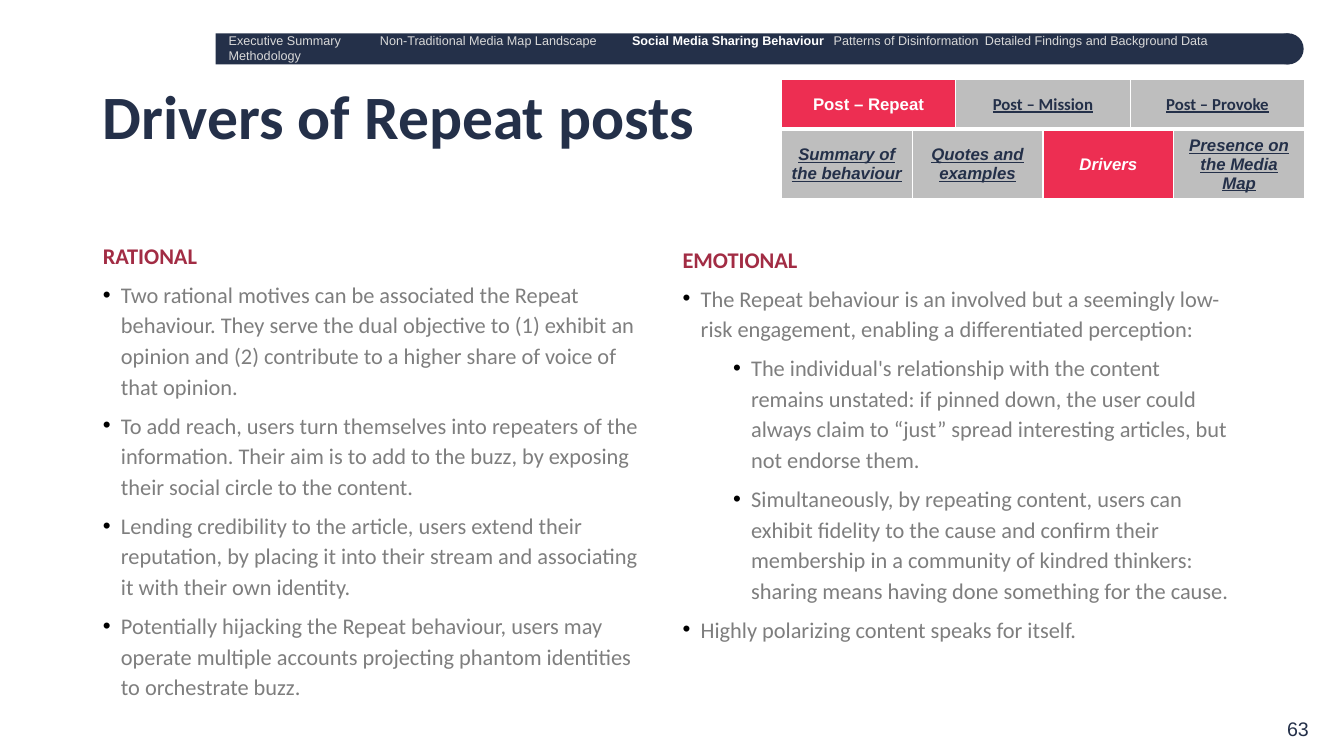
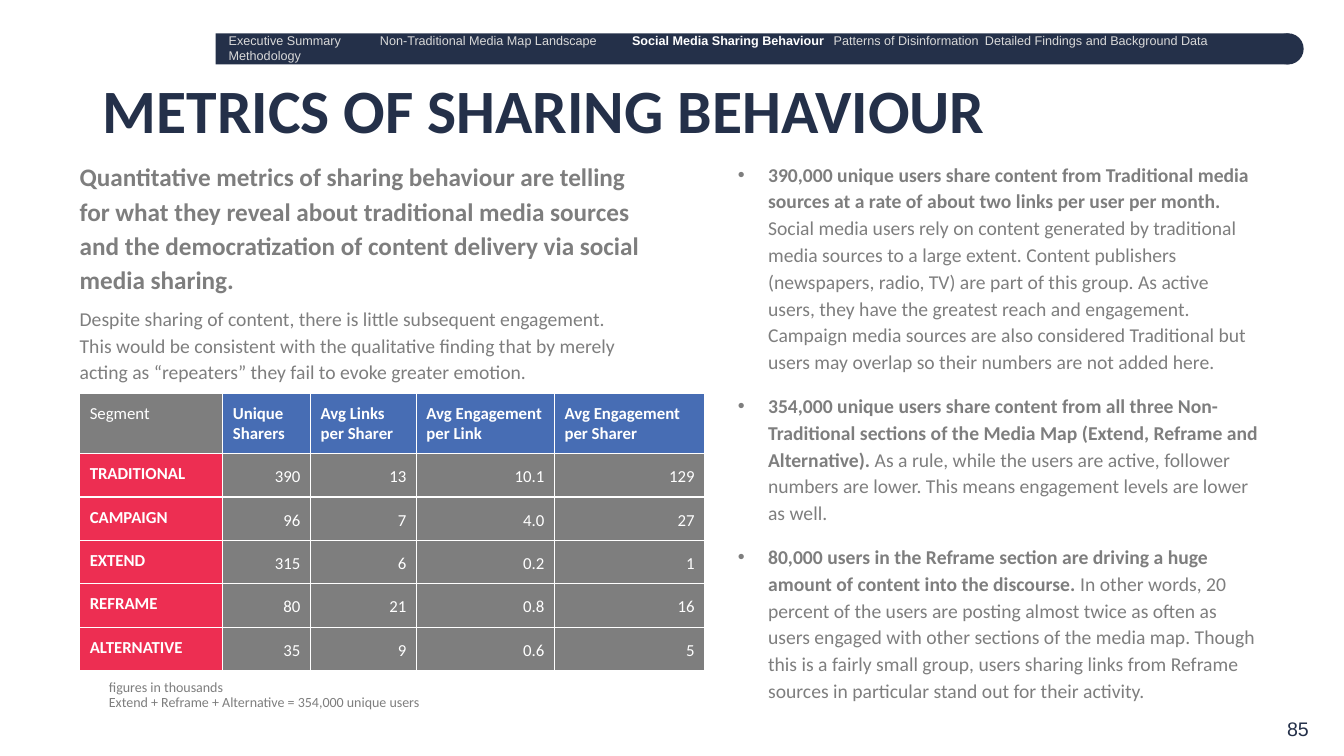
from pptx import Presentation
from pptx.dml.color import RGBColor
from pptx.enum.shapes import MSO_SHAPE
from pptx.enum.text import MSO_ANCHOR, MSO_AUTO_SIZE, PP_ALIGN
from pptx.oxml.ns import qn
from pptx.util import Pt
from lxml.etree import SubElement

PX = 9144  # EMU in one px, 100 px to the inch
NAVY = RGBColor(0x24, 0x30, 0x49)
RED = RGBColor(0xED, 0x2E, 0x52)
CRIMSON = RGBColor(0xA2, 0x2C, 0x44)
GREY = RGBColor(0x7E, 0x7E, 0x7E)
PALE = RGBColor(0xD9, 0xD9, 0xD9)
BLUE = RGBColor(0x47, 0x6D, 0xB4)
BLACK = RGBColor(0, 0, 0)
WHITE = RGBColor(0xFF, 0xFF, 0xFF)

NAV = ["Executive Summary", "Non-Traditional Media Map Landscape",
       "Social Media Sharing Behaviour", "Patterns of Disinformation",
       "Detailed Findings and Background Data", "Methodology"]
NAV_TABS = [128, 360, 568, 729, 967]
NAV_CURRENT = 2


def write(p, parts, size, color, font="Calibri", spacing=1.0, before=0, after=0,
          align=PP_ALIGN.LEFT, margin=0, hang=0, bullet=None):
    """Fill a paragraph with (text, bold) parts; bullet is the bullet colour."""
    p.alignment, p.line_spacing = align, spacing
    p.space_before, p.space_after = Pt(before), Pt(after)
    pPr = p._p.get_or_add_pPr()
    pPr.set("marL", str(margin * PX))
    pPr.set("indent", str(-hang * PX))
    if bullet is None:
        SubElement(pPr, qn("a:buNone"))
    else:
        SubElement(SubElement(pPr, qn("a:buClr")), qn("a:srgbClr"), val=str(bullet))
        SubElement(pPr, qn("a:buFont"), typeface="Arial")
        SubElement(pPr, qn("a:buChar"), char="•")
    for text, bold in parts:
        r = p.add_run()
        r.text = text
        r.font.name, r.font.size, r.font.bold = font, Pt(size), bold
        r.font.color.rgb = color


def style_cell(cell, fill, alpha=100, bottom=1, pad=10):
    """Give a cell white borders, a fill and its margins."""
    tcPr = cell._tc.get_or_add_tcPr()
    for side, width in (("L", 1), ("R", 1), ("T", 1), ("B", bottom)):
        ln = SubElement(tcPr, qn("a:ln" + side), w=str(Pt(width)))
        SubElement(SubElement(ln, qn("a:solidFill")), qn("a:srgbClr"), val=str(WHITE))
    cell.fill.solid()
    cell.fill.fore_color.rgb = fill
    if alpha < 100:
        clr = tcPr.find(qn("a:solidFill")).find(qn("a:srgbClr"))
        SubElement(clr, qn("a:alpha"), val=str(alpha * 1000))
    cell.margin_left = cell.margin_right = 10 * PX
    cell.margin_top = cell.margin_bottom = pad * PX


prs = Presentation()
prs.slide_width, prs.slide_height = 1333 * PX, 750 * PX

# Shared parts: band, navigation, page number, title, placeholder places
pages = [
    ("63", "Drivers of Repeat posts", 5,
     [(92, 40, 1150, 158), (92, 235, 567, 476), (667, 235, 567, 430)]),
    ("85", "METRICS OF SHARING BEHAVIOUR", 10,
     [(92, 40, 920, 145), (69, 146, 576, 572), (79, 665, 392, 53)]),
]
slides = []
for number, title, pad, boxes in pages:
    s = prs.slides.add_slide(prs.slide_layouts[3])
    slides.append(s)
    for shape, left, width in ((MSO_SHAPE.RECTANGLE, 214, 1064), (MSO_SHAPE.OVAL, 1262, 31)):
        sp = s.shapes.add_shape(shape, left * PX, 33 * PX, width * PX, 31 * PX)
        sp.shadow.inherit = False
        sp.fill.solid()
        sp.fill.fore_color.rgb = NAVY
        sp.line.fill.background()

    tf = s.shapes.add_textbox(217 * PX, 34 * PX, 1071 * PX, 27 * PX).text_frame
    tf.word_wrap, tf.vertical_anchor = True, MSO_ANCHOR.MIDDLE
    p = tf.paragraphs[0]
    last = len(NAV) - 1
    write(p, [(name + "\t" * (i < last), i == NAV_CURRENT) for i, name in enumerate(NAV)],
          9, PALE, "Arial")
    p.runs[NAV_CURRENT].font.color.rgb = WHITE
    tabs = SubElement(p._p.pPr, qn("a:tabLst"))
    for pos in NAV_TABS:
        SubElement(tabs, qn("a:tab"), pos=str(pos * PX), algn="l")

    tf = s.shapes.add_textbox(1190 * PX, 706 * PX, 118 * PX, 34 * PX).text_frame
    tf.word_wrap = True
    write(tf.paragraphs[0], [(number, False)], 14, NAVY, "Arial", align=PP_ALIGN.RIGHT)

    for ph, box in zip(s.placeholders, boxes):
        ph.left, ph.top, ph.width, ph.height = (v * PX for v in box)
        tf = ph.text_frame
        tf.auto_size = MSO_AUTO_SIZE.NONE
        tf.margin_left = tf.margin_right = 10 * PX
        tf.margin_top = tf.margin_bottom = pad * PX
    tf = s.shapes.title.text_frame
    tf.vertical_anchor = MSO_ANCHOR.MIDDLE
    write(tf.paragraphs[0], [(title, True)], 44, NAVY, spacing=0.9)

drivers, metrics = slides

# Drivers: two lists, each item with its level
columns = [
    ("RATIONAL", 1.0, [
        (0, "Two rational motives can be associated the Repeat behaviour. They serve the dual "
            "objective to (1) exhibit an opinion and (2) contribute to a higher share of voice "
            "of that opinion."),
        (0, "To add reach, users turn themselves into repeaters of the information. Their aim "
            "is to add to the buzz, by exposing their social circle to the content."),
        (0, "Lending credibility to the article, users extend their reputation, by placing it "
            "into their stream and associating it with their own identity."),
        (0, "Potentially hijacking the Repeat behaviour, users may operate multiple accounts "
            "projecting phantom identities to orchestrate buzz."),
    ]),
    ("EMOTIONAL", 1.14, [
        (0, "The Repeat behaviour is an involved but a seemingly low-risk engagement, enabling "
            "a differentiated perception:"),
        (1, "The individual's relationship with the content remains unstated: if pinned down, "
            "the user could always claim to “just” spread interesting articles, but not "
            "endorse them."),
        (1, "Simultaneously, by repeating content, users can exhibit fidelity to the cause and "
            "confirm their membership in a community of kindred thinkers: sharing means having "
            "done something for the cause."),
        (0, "Highly polarizing content speaks for itself."),
    ]),
]
for idx, (heading, spacing, items) in enumerate(columns, 1):
    tf = drivers.placeholders[idx].text_frame
    write(tf.paragraphs[0], [(heading, True)], 16, CRIMSON, spacing=spacing)
    for level, text in items:
        p = tf.add_paragraph()
        p.level = level
        write(p, [(text, False)], 16, GREY, spacing=1.14, before=6,
              margin=18 + 50 * level, hang=18, bullet=BLACK)

# Drivers: two rows of tabs, the current one in red
tab_rows = [
    (128, 55, "Drivers", True, "Arial",
     ["Summary of the behaviour", "Quotes and examples", "Drivers", "Presence on the Media Map"]),
    (79, 49, "Post – Repeat", False, "Calibri",
     ["Post – Repeat", "Post – Mission", "Post – Provoke"]),
]
for top, height, current, italic, font, labels in tab_rows:
    tbl = drivers.shapes.add_table(1, len(labels), 775 * PX, top * PX,
                                   519 * PX, height * PX).table
    tbl.first_row = tbl.horz_banding = False
    for cell, label in zip(tbl.rows[0].cells, labels):
        active = label == current
        style_cell(cell, RED if active else GREY, 100 if active else 50, bottom=3, pad=5)
        cell.vertical_anchor = MSO_ANCHOR.MIDDLE
        p = cell.text_frame.paragraphs[0]
        write(p, [(label, True)], 12, WHITE if active else NAVY,
              "Arial" if active else font, align=PP_ALIGN.CENTER)
        p.runs[0].font.italic, p.runs[0].font.underline = italic, not active

# Metrics: introduction and footnotes
tf = metrics.placeholders[1].text_frame
write(tf.paragraphs[0], [(
    "Quantitative metrics of sharing behaviour are telling for what they reveal about "
    "traditional media sources and the democratization of content delivery via social media "
    "sharing.", True)], 18, GREY, spacing=1.14)
write(tf.add_paragraph(), [(
    "Despite sharing of content, there is little subsequent engagement. This would be "
    "consistent with the qualitative finding that by merely acting as “repeaters” they fail "
    "to evoke greater emotion.", False)], 14, GREY, spacing=1.14, before=6)

tf = metrics.placeholders[2].text_frame
write(tf.paragraphs[0], [("figures in thousands", False)], 10, GREY, spacing=0.9, margin=19)
write(tf.add_paragraph(), [("Extend + Reframe + Alternative = 354,000 unique users", False)],
      10, GREY, spacing=0.9, margin=19)

# Metrics: table of segments
rows = [
    ["Segment", "Unique Sharers", "Avg Links per Sharer", "Avg Engagement per Link",
     "Avg Engagement per Sharer"],
    ["TRADITIONAL", "390", "13", "10.1", "129"],
    ["CAMPAIGN", "96", "7", "4.0", "27"],
    ["EXTEND", "315", "6", "0.2", "1"],
    ["REFRAME", "80", "21", "0.8", "16"],
    ["ALTERNATIVE", "35", "9", "0.6", "5"],
]
tbl = metrics.shapes.add_table(len(rows), len(rows[0]), 79 * PX, 390 * PX,
                               620 * PX, 269 * PX).table
tbl.first_row = tbl.horz_banding = False
for col, width in zip(tbl.columns, (142, 87, 105, 137, 149)):
    col.width = width * PX
for i, row in enumerate(rows):
    tbl.rows[i].height = (42 if i else 59) * PX
    for j, text in enumerate(row):
        cell = tbl.cell(i, j)
        value = i > 0 and j > 0
        corner = i == 0 and j == 0
        style_cell(cell, GREY if value or corner else BLUE if i == 0 else RED)
        write(cell.text_frame.paragraphs[0], [(text, not (value or corner))], 12, WHITE,
              spacing=1.15 if value else 1.0,
              align=PP_ALIGN.RIGHT if value else PP_ALIGN.LEFT)

# Metrics: findings, each a bold claim and its explanation
findings = [
    ("390,000 unique users share content from Traditional media sources at a rate of about two "
     "links per user per month. ",
     "Social media users rely on content generated by traditional media sources to a large "
     "extent. Content publishers (newspapers, radio, TV) are part of this group. As active "
     "users, they have the greatest reach and engagement. Campaign media sources are also "
     "considered Traditional but users may overlap so their numbers are not added here."),
    ("354,000 unique users share content from all three Non-Traditional sections of the Media "
     "Map (Extend, Reframe and Alternative). ",
     "As a rule, while the users are active, follower numbers are lower. This means engagement "
     "levels are lower as well."),
    ("80,000 users in the Reframe section are driving a huge amount of content into the "
     "discourse. ",
     "In other words, 20 percent of the users are posting almost twice as often as users "
     "engaged with other sections of the media map. Though this is a fairly small group, users "
     "sharing links from Reframe sources in particular stand out for their activity."),
]
tf = metrics.shapes.add_textbox(722 * PX, 153 * PX, 536 * PX, 554 * PX).text_frame
tf.word_wrap = True
for i, (claim, detail) in enumerate(findings):
    p = tf.add_paragraph() if i else tf.paragraphs[0]
    write(p, [(claim, True), (detail, False)], 14, GREY, spacing=1.14, after=12,
          margin=30, hang=30, bullet=GREY)

prs.save("out.pptx")
